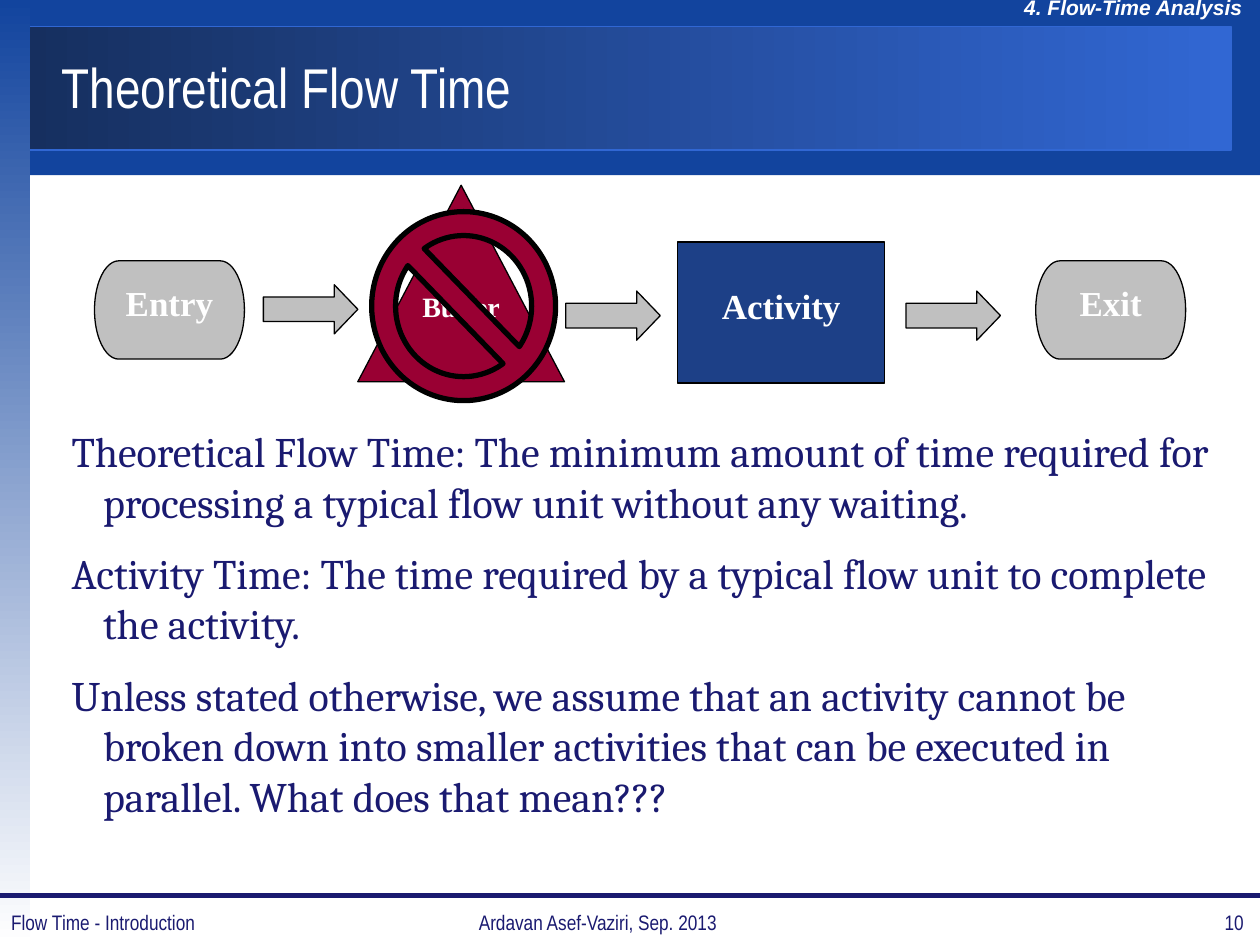
import pptx
import pptx.dml.color
import pptx.enum.shapes
import pptx.enum.text
import pptx.oxml
import pptx.oxml.ns
import pptx.util
from pptx.util import Inches

RGBColor = pptx.dml.color.RGBColor
Shape = pptx.enum.shapes.MSO_SHAPE
Align = pptx.enum.text.PP_ALIGN
Anchor = pptx.enum.text.MSO_ANCHOR

WHITE = RGBColor(0xFF, 0xFF, 0xFF)
BLACK = RGBColor(0x00, 0x00, 0x00)
BLUE = RGBColor(0x12, 0x44, 0x9E)
DARK_BLUE = RGBColor(0x16, 0x2F, 0x5F)
BRIGHT_BLUE = RGBColor(0x31, 0x67, 0xD3)
ACTIVITY_BLUE = RGBColor(0x1D, 0x40, 0x87)
NAVY = RGBColor(0x1A, 0x1A, 0x70)
GRAY = RGBColor(0xC0, 0xC0, 0xC0)
CRIMSON = RGBColor(0x99, 0x00, 0x33)

HEADER = {"name": "Arial", "size": 12, "bold": True, "italic": True, "color": WHITE}
TITLE = {"name": "Arial Narrow", "size": 32, "color": WHITE}
BODY = {"name": "Cambria", "size": 24, "color": NAVY}
FOOTER = {"name": "Arial Narrow", "size": 12, "color": NAVY}
STEP = {"name": "Times New Roman", "size": 20, "bold": True, "color": WHITE}

DEFINITIONS = [
    "Theoretical Flow Time: The minimum amount of time required for processing a typical flow unit without any waiting.",
    "Activity Time: The time required by a typical flow unit to complete the activity.",
    "Unless stated otherwise, we assume that an activity cannot be broken down into smaller activities "
    "that can be executed in parallel. What does that mean???",
]
STEPS = [
    ("Entry", Shape.FLOWCHART_TERMINATOR, (0.75, 2.07, 1.19, 0.78), GRAY, STEP, 0.05),
    ("Buffer", Shape.FLOWCHART_EXTRACT, (2.84, 1.47, 1.64, 1.56), CRIMSON, {**STEP, "size": 16}, 0.05),
    ("Activity", Shape.RECTANGLE, (5.38, 1.92, 1.64, 1.12), ACTIVITY_BLUE, STEP, 0.34),
    ("Exit", Shape.FLOWCHART_TERMINATOR, (8.22, 2.07, 1.19, 0.78), GRAY, STEP, 0.05),
]
ARROWS = [(2.09, 2.26), (4.49, 2.31), (7.19, 2.31)]
FOOTERS = [
    ("Flow Time - Introduction", -0.01, 2.33, Align.LEFT),
    ("Ardavan Asef-Vaziri, Sep. 2013", 3.16, 3.17, Align.CENTER),
    ("10", 7.64, 2.33, Align.RIGHT),
]


class SlideBuilder:
    """Draws styled elements on the current slide."""

    def __init__(self, slide):
        self.slide = slide

    def shape(self, kind, box, fill, line=None, line_width=0.75, adjustments=(), angle=0):
        shape = self.slide.shapes.add_shape(kind, *map(Inches, box))
        shape.shadow.inherit = False
        for index, value in enumerate(adjustments):
            shape.adjustments[index] = value
        if isinstance(fill, tuple) and not isinstance(fill, RGBColor):
            shape.fill.gradient()
            shape.fill.gradient_angle = angle
            for stop, color in zip(shape.fill.gradient_stops, fill):
                stop.color.rgb = color
        else:
            shape.fill.solid()
            shape.fill.fore_color.rgb = fill
        if line is None:
            shape.line.fill.background()
        else:
            shape.line.color.rgb = line
            shape.line.width = pptx.util.Pt(line_width)
        return shape

    def label(self, shape, texts, style, align=Align.LEFT, anchor=Anchor.TOP, top=0.05, hanging=0, after=0):
        frame = shape.text_frame
        settings = {"word_wrap": True, "vertical_anchor": anchor, "margin_top": Inches(top)}
        for name, value in settings.items():
            setattr(frame, name, value)
        for index, text in enumerate(texts):
            paragraph = frame.add_paragraph() if index else frame.paragraphs[0]
            paragraph.alignment = align
            paragraph.space_after = pptx.util.Pt(after)
            if hanging:
                properties = paragraph._p.get_or_add_pPr()
                properties.set("marL", str(Inches(hanging)))
                properties.set("indent", str(-Inches(hanging)))
            run = paragraph.add_run()
            run.text = text
            for name, value in style.items():
                if name == "color":
                    run.font.color.rgb = value
                else:
                    setattr(run.font, name, pptx.util.Pt(value) if name == "size" else value)

    def text(self, texts, box, style, **options):
        self.label(self.slide.shapes.add_textbox(*map(Inches, box)), texts, style, **options)

    def line(self, start, end, color, width):
        connector = self.slide.shapes.add_connector(
            pptx.enum.shapes.MSO_CONNECTOR.STRAIGHT, *map(Inches, start + end))
        connector.line.color.rgb = color
        connector.line.width = pptx.util.Pt(width)
        effects = pptx.oxml.parse_xml(f'<a:effectLst {pptx.oxml.ns.nsdecls("a")}/>')
        connector._element.spPr.append(effects)


def main():
    presentation = pptx.Presentation()
    presentation.slide_width, presentation.slide_height = Inches(10), Inches(7.5)
    builder = SlideBuilder(presentation.slides.add_slide(presentation.slide_layouts[6]))

    builder.shape(Shape.RECTANGLE, (0.2, 0, 9.8, 1.39), BLUE)
    builder.shape(Shape.RECTANGLE, (0.2, 0.21, 9.57, 0.98), (DARK_BLUE, BRIGHT_BLUE), BRIGHT_BLUE)
    builder.shape(Shape.RECTANGLE, (0, 0, 0.24, 7.5), (BLUE, WHITE), angle=270)
    builder.text(["4. Flow-Time Analysis"], (8.03, -0.09, 2.09, 0.3), HEADER)
    builder.line((0, 7.11), (10, 7.11), NAVY, 3)
    builder.text(["Theoretical Flow Time"], (0.39, 0.21, 9.29, 0.94), TITLE, anchor=Anchor.MIDDLE)
    builder.text(DEFINITIONS, (0.47, 3.33, 9.53, 3.69), BODY, hanging=0.25, after=12)

    for name, kind, box, fill, style, top in STEPS:
        step = builder.shape(kind, box, fill, BLACK)
        builder.label(step, [name], style, align=Align.CENTER, top=top)
    builder.shape(Shape.NO_SYMBOL, (2.95, 1.68, 1.46, 1.5), CRIMSON, BLACK, 3, (0.13,))
    for left, top in ARROWS:
        builder.shape(Shape.RIGHT_ARROW, (left, top, 0.75, 0.39), GRAY, BLACK, adjustments=(0.5, 0.48))

    for footer, left, width, align in FOOTERS:
        builder.text([footer], (left, 7.12, width, 0.4), FOOTER, align=align, anchor=Anchor.MIDDLE)
    presentation.save("out.pptx")


if __name__ == "__main__":
    main()
